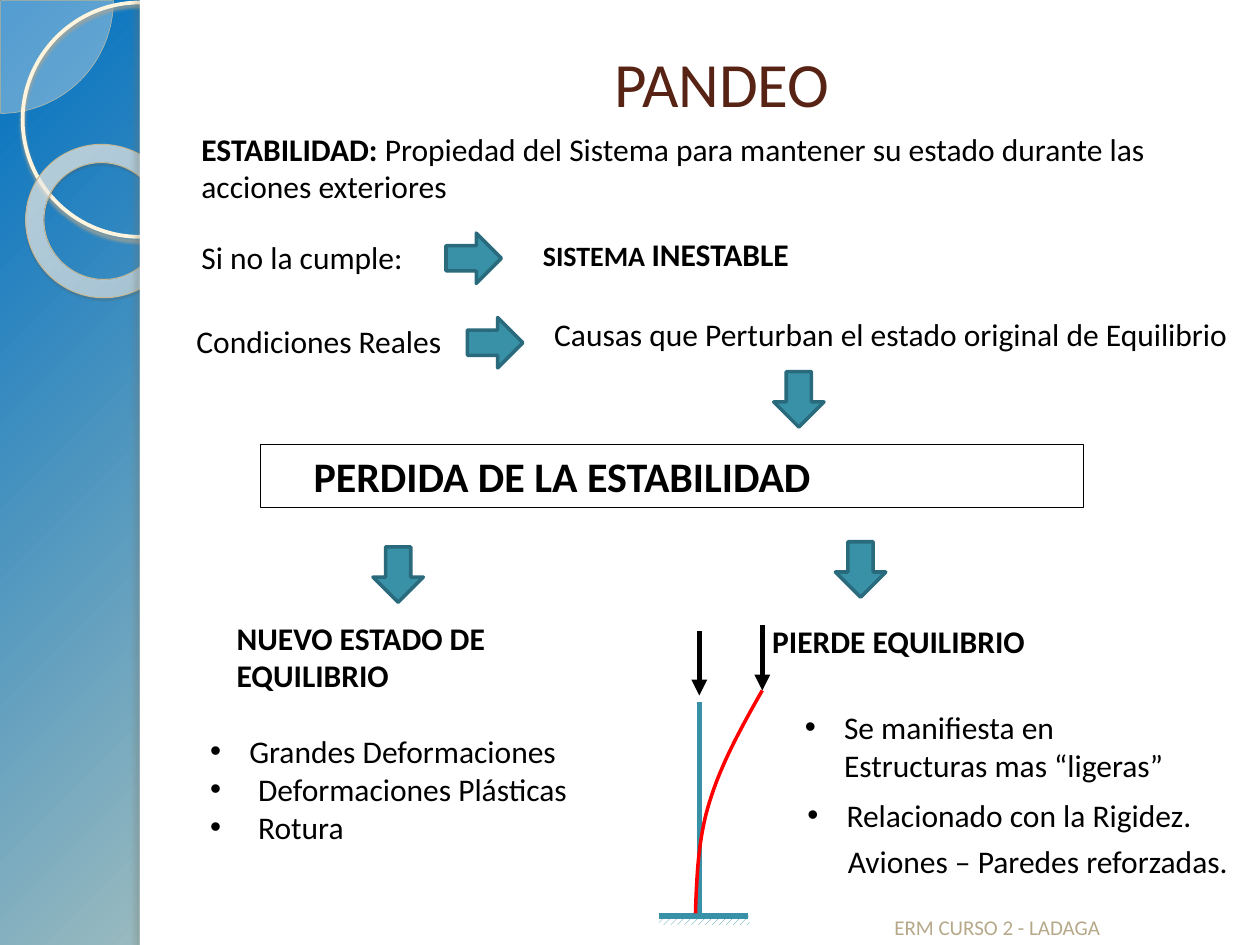
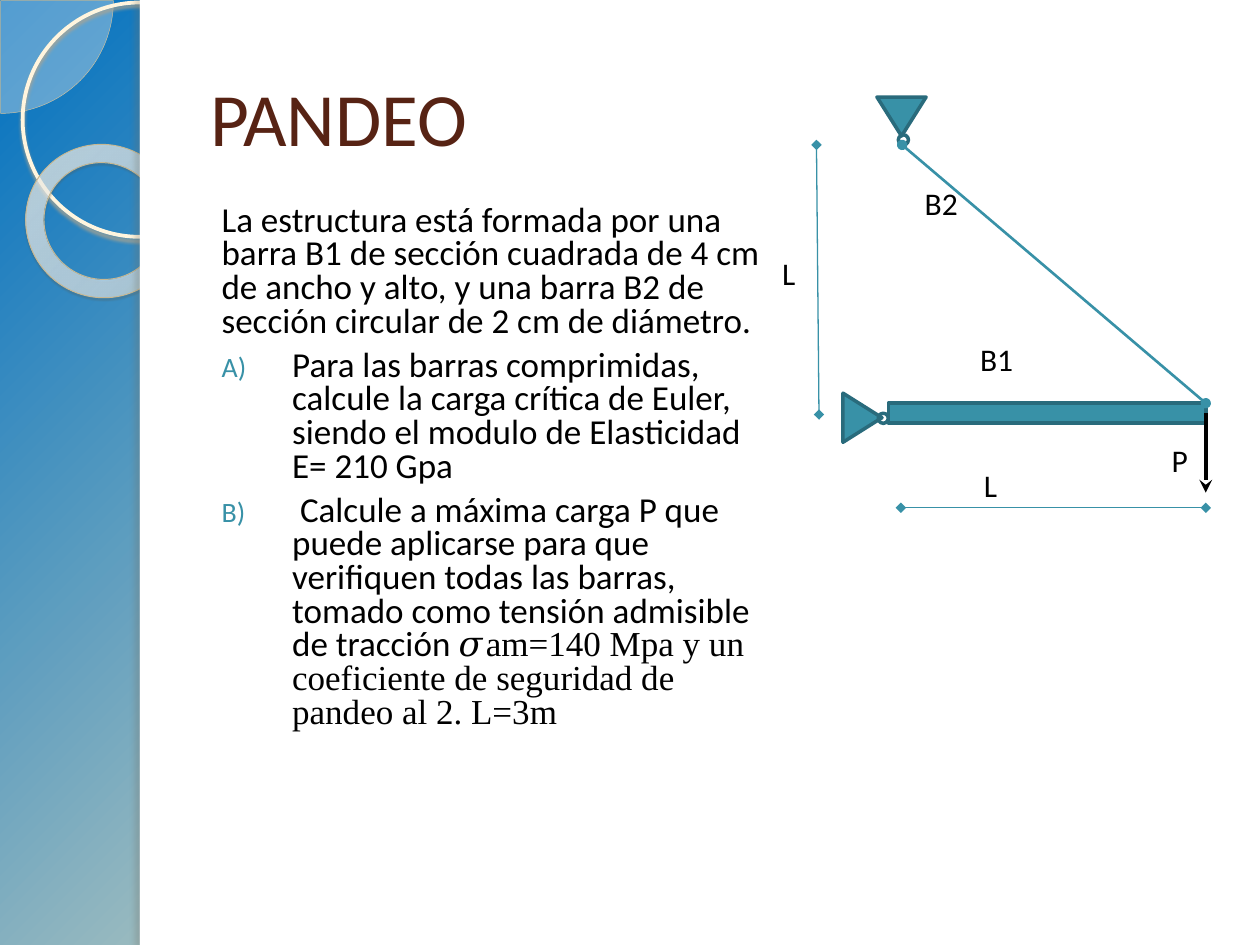
"""Builds two slides on buckling: the loss of stability and a two-bar exercise."""
from lxml import etree
from pptx import Presentation
from pptx.dml.color import RGBColor
from pptx.enum.dml import MSO_PATTERN_TYPE
from pptx.enum.shapes import MSO_CONNECTOR, MSO_SHAPE
from pptx.enum.text import MSO_ANCHOR, PP_ALIGN
from pptx.oxml import parse_xml
from pptx.oxml.ns import nsdecls, qn
from pptx.util import Inches, Pt

RECT, OVAL, PIE = MSO_SHAPE.RECTANGLE, MSO_SHAPE.OVAL, MSO_SHAPE.PIE
DONUT, ARROW, WEDGE = MSO_SHAPE.DONUT, MSO_SHAPE.RIGHT_ARROW, MSO_SHAPE.ISOSCELES_TRIANGLE
HATCH = MSO_PATTERN_TYPE.WIDE_UPWARD_DIAGONAL
STRAIGHT = MSO_CONNECTOR.STRAIGHT
TOP, MIDDLE, BOTTOM = MSO_ANCHOR.TOP, MSO_ANCHOR.MIDDLE, MSO_ANCHOR.BOTTOM
LEFT, CENTER = PP_ALIGN.LEFT, PP_ALIGN.CENTER

BLACK = RGBColor(0, 0, 0)
WHITE = RGBColor(255, 255, 255)
RED = RGBColor(255, 0, 0)
TEAL = RGBColor(0x38, 0x91, 0xA7)
DEEP = RGBColor(0x29, 0x6B, 0x7C)
BROWN = RGBColor(0x57, 0x23, 0x14)
SAND = RGBColor(0xB6, 0xA9, 0x8A)
CREAM = RGBColor(0xFE, 0xFA, 0xF4)
RING = RGBColor(0xFF, 0xF5, 0xDE)
PIE_EDGE = RGBColor(0xD3, 0xC3, 0x9F)
DONUT_EDGE = RGBColor(0xC7, 0xB8, 0x93)

SKY = [(0, "0070C0", 100), (82, "FFEBBE", 100), (100, "C9B484", 100)]
SKY_BOX = (-24, -20, 124, 120)
GLASS = [(0, "FFFCF6", 70), (70, "FFFEFB", 55), (100, "F0D28E", 60)]
GLASS_BOX = (-408, -50, 508, 150)

BODY, MATH = "Calibri", "Times New Roman"
NEAR, DOT, WIDE = (0.09, 0), (0.4, -0.31), (0.47, -0.38)
BOLD = {"bold": True}

NOTES = [
    ((1.41, 0.98, 8.31, 1.01), [[("ESTABILIDAD: ", BOLD),
     ("Propiedad del Sistema para mantener su estado durante las acciones exteriores", {})]], {}),
    ((1.41, 1.84, 1.94, 0.71), ["Si no la cumple:"], {}),
    ((4.12, 1.82, 3.06, 0.4), [[("SISTEMA ", {"size": 16}), ("INESTABLE", {})]], BOLD),
    ((1.37, 2.51, 2.39, 0.71), ["Condiciones Reales"], {}),
    ((4.21, 2.45, 5.79, 0.71), ["Causas que Perturban el estado original de Equilibrio"], {}),
    ((1.69, 4.86, 2.94, 0.71), ["NUEVO ESTADO DE EQUILIBRIO"], BOLD),
    ((5.94, 4.89, 2.94, 0.4), ["PIERDE EQUILIBRIO"], BOLD),
    ((1.48, 5.76, 3.15, 1.01),
     ["Grandes Deformaciones", "Deformaciones Plásticas", "Rotura"],
     {"indents": [DOT, WIDE, WIDE], "bullet": "•"}),
    ((6.2, 5.57, 3.15, 0.71), ["Se manifiesta en Estructuras mas “ligeras”"],
     {"indents": [DOT], "bullet": "•"}),
    ((6.22, 6.27, 3.78, 0.4), ["Relacionado con la Rigidez."],
     {"indents": [DOT], "bullet": "•"}),
    ((6.54, 6.63, 3.46, 0.4), ["Aviones – Paredes reforzadas."], {}),
]
ARROWS = [(3.54, 1.85, 0), (3.71, 2.52, 0), (6.12, 2.97, 90), (2.94, 4.36, 90), (6.61, 4.32, 90)]
BENT = [[(5.52, 7.25), (5.53, 6.96), (5.54, 6.66), (5.63, 6.37)],
        [(5.63, 6.37), (5.72, 6.07), (5.88, 5.78), (6.05, 5.48)]]
COLUMN = [
    ((5.23, 7.27), (5.94, 7.27), TEAL, None),
    ((5.55, 7.28), (5.55, 5.57), TEAL, None),
    ((5.55, 5.01), (5.55, 5.52), BLACK, "triangle"),
    ((6.05, 4.96), (6.05, 5.48), BLACK, "triangle"),
]

TASK = [
    "La estructura está formada por una barra B1 de sección cuadrada de 4 cm de ancho y alto, "
    "y una barra B2 de sección circular de 2 cm de diámetro.",
    "Para las barras comprimidas, calcule la carga crítica de Euler, siendo el modulo de "
    "Elasticidad E= 210 Gpa",
    [(" Calcule a máxima carga P que puede aplicarse para que verifiquen todas las barras, "
      "tomado como tensión admisible de tracción ", {}),
     ("𝜎am=140 Mpa y un coeficiente de seguridad de pandeo al 2. L=3m", {"font": MATH})],
]
LABELS = [("B1", 7.68, 2.65), ("B2", 7.24, 1.41), ("P", 9.2, 3.45), ("L", 7.71, 3.65), ("L", 6.11, 1.97)]
JOINTS = [
    (RECT, (7.05, 3.2, 2.52, 0.16), 0, TEAL),
    (WEDGE, (6.65, 3.16, 0.39, 0.31), 90, TEAL),
    (OVAL, (6.97, 3.28, 0.08, 0.08), 0, None),
    (WEDGE, (6.96, 0.77, 0.39, 0.31), 180, TEAL),
    (OVAL, (7.13, 1.07, 0.08, 0.08), 0, None),
]
SPANS = [
    ((9.57, 3.2), (7.16, 1.15), TEAL, 1.5, "oval", "oval"),
    ((9.57, 3.28), (9.57, 3.91), BLACK, 2.5, None, "stealth"),
    ((7.15, 4.03), (9.57, 4.03), TEAL, 0.75, "diamond", "diamond"),
    ((6.5, 3.29), (6.48, 1.15), TEAL, 0.75, "diamond", "diamond"),
]


def add(root, tag, **attrs):
    return etree.SubElement(root, qn(tag), {k: str(v) for k, v in attrs.items()})


def blend(fill, root, stops, box):
    fill.gradient()
    old = next(root.iter(qn("a:gradFill")))
    new = parse_xml(f'<a:gradFill {nsdecls("a")} rotWithShape="1"/>')
    group = add(new, "a:gsLst")
    for spot, tone, alpha in stops:
        tint = add(add(group, "a:gs", pos=spot * 1000), "a:srgbClr", val=tone)
        if alpha < 100:
            add(tint, "a:alpha", val=alpha * 1000)
    way = add(new, "a:path", path="circle")
    add(way, "a:fillToRect", **{k: v * 1000 for k, v in zip("ltrb", box)})
    old.getparent().replace(old, new)


def paint(item, fill, edge, width):
    item.shadow.inherit = False
    if fill is None:
        item.fill.background()
    else:
        item.fill.solid()
        item.fill.fore_color.rgb = fill
    if edge is None:
        item.line.fill.background()
    else:
        item.line.color.rgb = edge
        item.line.width = Pt(width)


def shape(slide, kind, box, fill=None, edge=None, width=2, turn=0):
    item = slide.shapes.add_shape(kind, *map(Inches, box))
    item.rotation = turn
    paint(item, fill, edge, width)
    return item


def shade(item, tone, alpha, blur, dist, angle):
    root = item._element.spPr.find(qn("a:effectLst"))
    cast = add(root, "a:outerShdw", blurRad=Pt(blur), dist=Pt(dist),
               dir=angle * 60000, algn="tl", rotWithShape=0)
    add(add(cast, "a:srgbClr", val=tone), "a:alpha", val=alpha * 1000)


def line(slide, start, end, color, width=3, head=None, tail=None):
    item = slide.shapes.add_connector(STRAIGHT, *map(Inches, start + end))
    item.line.color.rgb = color
    item.line.width = Pt(width)
    props = item._element.spPr
    for tag, mark in (("a:headEnd", head), ("a:tailEnd", tail)):
        if mark:
            add(props.find(qn("a:ln")), tag, type=mark)
    add(props, "a:effectLst")


def text(slide, box, paras, size=18, color=BLACK, bold=False, font=BODY, align=LEFT,
         anchor=TOP, indents=None, bullet=None, space=None, before=0):
    frame = slide.shapes.add_textbox(*map(Inches, box)).text_frame
    frame.word_wrap = True
    frame.vertical_anchor = anchor
    for i, runs in enumerate(paras):
        para = frame.add_paragraph() if i else frame.paragraphs[0]
        para.alignment = align
        para.space_before = Pt(before)
        if space:
            para.line_spacing = space
        left, first = indents[i] if indents else NEAR
        props = para._p.get_or_add_pPr()
        props.set("marL", str(Inches(left)))
        props.set("indent", str(Inches(first)))
        if bullet and first:
            if bullet == "auto":
                add(add(props, "a:buClr"), "a:srgbClr", val=TEAL)
                add(props, "a:buSzPct", val=80000)
                add(props, "a:buFont", typeface=BODY)
                add(props, "a:buAutoNum", type="alphaUcParenR")
            else:
                add(props, "a:buFont", typeface="Arial")
                add(props, "a:buChar", char=bullet)
        for words, own in [(runs, {})] if isinstance(runs, str) else runs:
            run = para.add_run()
            run.text = words
            run.font.size = Pt(own.get("size", size))
            run.font.bold = own.get("bold", bold)
            run.font.name = own.get("font", font)
            run.font.color.rgb = color


def base(deck, box, size, align):
    slide = deck.slides.add_slide(deck.slide_layouts[6])
    blend(slide.background.fill, slide._element, SKY, SKY_BOX)
    pie = shape(slide, PIE, (-0.89, -0.89, 1.79, 1.79), CREAM, PIE_EDGE, 0.25)
    pie.adjustments[0], pie.adjustments[1] = 0, 54.02
    add(pie._element.spPr.find(qn("a:solidFill"))[0], "a:alpha", val=33000)
    ring = shape(slide, OVAL, (0.18, 0.02, 1.86, 1.86), None, RING, 2.15)
    shade(ring, "B0A68F", 85, 2, 2, 90)
    donut = shape(slide, DONUT, (0.2, 1.15, 1.23, 1.21), None, DONUT_EDGE, 0.58, 38.6)
    donut.adjustments[0] = 0.12
    blend(donut.fill, donut._element, GLASS, GLASS_BOX)
    shade(donut, "5A5444", 35, 1, 1.2, 75)
    shape(slide, RECT, (1.11, 0, 8.89, 7.5), WHITE)
    shade(shape(slide, RECT, (1.11, 0, 0.08, 7.5), WHITE), "736F63", 25, 3, 3, 180)
    text(slide, box, ["PANDEO"], size=size, color=BROWN, align=align, anchor=MIDDLE, indents=[(0, 0)])
    return slide


def curve(slide, parts, steps=16):
    spots = [parts[0][0]]
    for a, b, c, d in parts:
        for i in range(1, steps + 1):
            t = i / steps
            u = 1 - t
            spots.append(tuple(u**3 * p + 3 * u * u * t * q + 3 * u * t * t * r + t**3 * s
                               for p, q, r, s in zip(a, b, c, d)))
    spots = [(Inches(x), Inches(y)) for x, y in spots]
    pen = slide.shapes.build_freeform(*spots[0])
    pen.add_line_segments(spots[1:], close=False)
    paint(pen.convert_to_shape(), None, RED, 2)


def theory(deck):
    slide = base(deck, (1.63, 0.03, 8.2, 1.25), 36, CENTER)
    for box, paras, form in NOTES:
        text(slide, box, paras, **form)
    text(slide, (7, 7.18, 3, 0.33), ["ERM CURSO 2 - LADAGA"], size=12, color=SAND,
         anchor=BOTTOM, indents=[(0, 0)])
    for x, y, turn in ARROWS:
        shape(slide, ARROW, (x, y, 0.44, 0.4), TEAL, DEEP, turn=turn)
    frame = (2.07, 3.53, 6.53, 0.5)
    shape(slide, RECT, frame, None, BLACK, 0.75)
    text(slide, frame, ["PERDIDA DE LA ESTABILIDAD"], size=24, bold=True, indents=[(0.32, 0)])
    ground = shape(slide, RECT, (5.23, 7.27, 0.72, 0.07))
    ground.fill.patterned()
    ground.fill.pattern = HATCH
    ground.fill.fore_color.rgb = TEAL
    ground.fill.back_color.rgb = WHITE
    for start, end, color, tail in COLUMN:
        line(slide, start, end, color, tail=tail)
    curve(slide, BENT)


def drill(deck):
    slide = base(deck, (1.57, 0.3, 8.2, 1.25), 43, LEFT)
    text(slide, (1.57, 1.58, 4.61, 5.25), TASK, size=20, space=0.8, before=6,
         indents=[NEAR, (0.65, -0.56), (0.65, -0.56)], bullet="auto")
    for kind, box, turn, fill in JOINTS:
        shape(slide, kind, box, fill, DEEP, turn=turn)
    for span in SPANS:
        line(slide, *span)
    for word, x, y in LABELS:
        text(slide, (x, y, 0.79, 0.4), [word], indents=[(0, 0)])


def main():
    deck = Presentation()
    deck.slide_width, deck.slide_height = Inches(10), Inches(7.5)
    theory(deck)
    drill(deck)
    deck.save("out.pptx")


if __name__ == "__main__":
    main()
